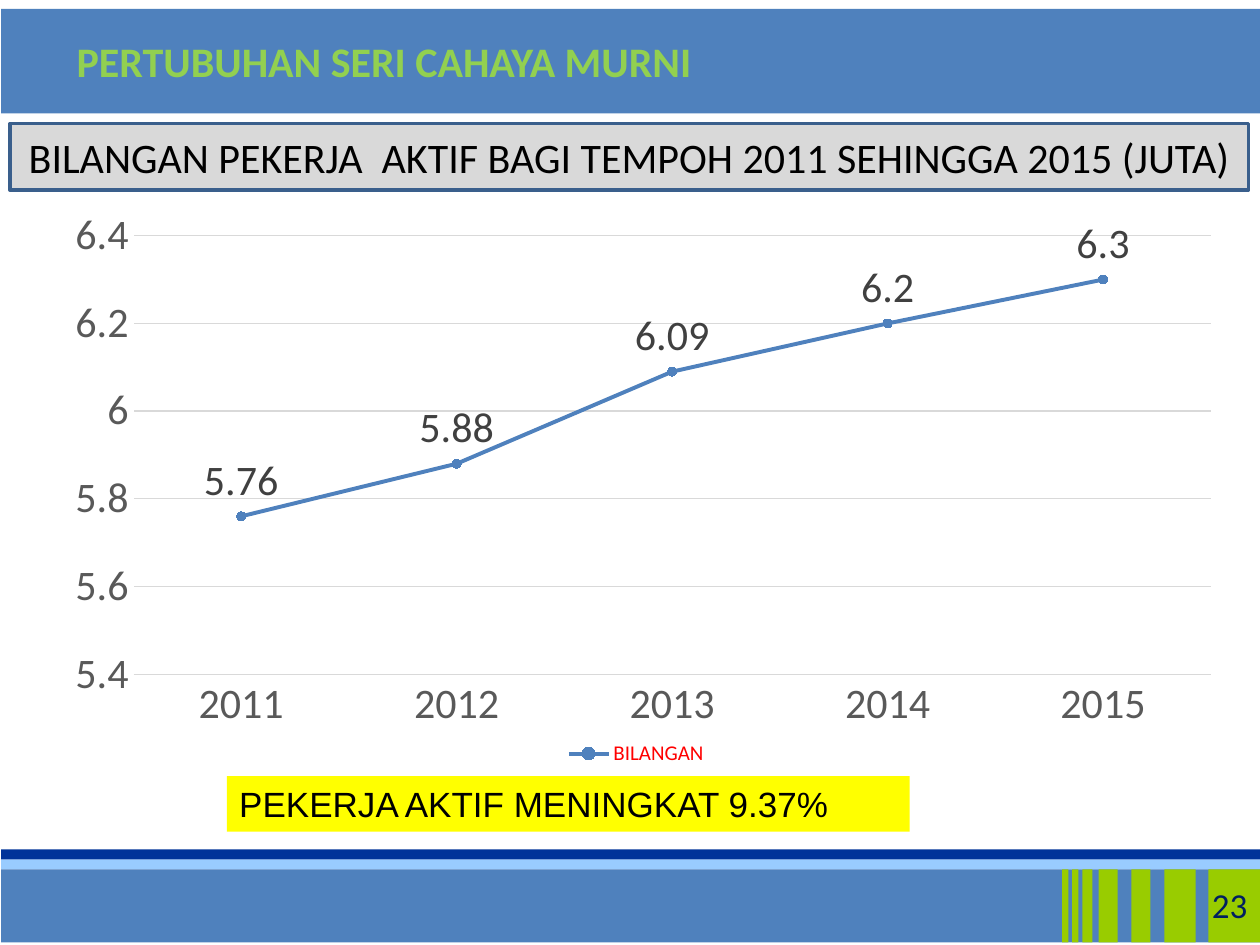
from dataclasses import dataclass

from lxml import etree
from pptx import Presentation
from pptx.chart import data as cd
from pptx.dml import color as dc
from pptx.enum import chart as ec
from pptx.enum import shapes, text
from pptx.oxml import ns
from pptx.util import Inches, Pt

BLUE, GREEN, GREY = "4F81BD", "99CC00", "D9D9D9"


@dataclass
class Box:
    left: float
    top: float
    width: float
    height: float

    def lengths(self) -> tuple:
        return tuple(Inches(v) for v in (self.left, self.top, self.width, self.height))


@dataclass
class Label:
    words: str
    size: float
    color: str
    font: str = "Calibri"
    bold: bool = False
    align: text.PP_ALIGN = text.PP_ALIGN.LEFT
    anchor: text.MSO_ANCHOR = text.MSO_ANCHOR.TOP
    level: int = 0


def rgb(value: str) -> dc.RGBColor:
    return dc.RGBColor.from_string(value)


def paint(fill, color: str) -> None:
    fill.solid()
    fill.fore_color.rgb = rgb(color)


def set_all(target, values: dict) -> None:
    for name, value in values.items():
        setattr(target, name, value)


def style_font(font, size: float, color: str, name: str = "Calibri", bold: bool = False) -> None:
    set_all(font, {"size": Pt(size), "name": name, "bold": bold})
    font.color.rgb = rgb(color)


def style_line(line, color: str, width: float) -> None:
    line.color.rgb = rgb(color)
    line.width = Pt(width)


def write(sp, label: Label) -> None:
    tf = sp.text_frame
    set_all(tf, {"word_wrap": True, "auto_size": text.MSO_AUTO_SIZE.NONE,
                 "vertical_anchor": label.anchor})
    p = tf.paragraphs[0]
    set_all(p, {"alignment": label.align, "level": label.level})
    r = p.add_run()
    r.text = label.words
    style_font(r.font, label.size, label.color, label.font, label.bold)


def add_rect(s, box: Box, color: str):
    sp = s.shapes.add_shape(shapes.MSO_SHAPE.RECTANGLE, *box.lengths())
    sp.shadow.inherit = False
    paint(sp.fill, color)
    sp.line.fill.background()
    return sp


def add_text(s, box: Box, label: Label) -> None:
    write(s.shapes.add_textbox(*box.lengths()), label)


def place_plot(chart, **area: float) -> None:
    plot_area = chart._chartSpace.chart.plotArea
    for old in plot_area.findall(ns.qn("c:layout")):
        plot_area.remove(old)
    layout = etree.Element(ns.qn("c:layout"))
    manual = etree.SubElement(layout, ns.qn("c:manualLayout"))
    values = {"layoutTarget": "inner", "xMode": "edge", "yMode": "edge", **area}
    for tag, value in values.items():
        etree.SubElement(manual, ns.qn(f"c:{tag}")).set("val", str(value))
    plot_area.insert(0, layout)


def add_workers_chart(s, box: Box) -> None:
    data = cd.CategoryChartData()
    data.categories = [str(year) for year in range(2011, 2016)]
    data.add_series("BILANGAN", (5.76, 5.88, 6.09, 6.2, 6.3))
    chart = s.shapes.add_chart(ec.XL_CHART_TYPE.LINE_MARKERS, *box.lengths(), data).chart
    set_all(chart, {"has_title": False, "has_legend": True})
    style_font(chart.font, 10, "000000")
    set_all(chart.legend, {"position": ec.XL_LEGEND_POSITION.BOTTOM, "include_in_layout": False})
    style_font(chart.legend.font, 12, "FF0000")
    place_plot(chart, x=0.08, y=0.06, w=0.9, h=0.77)

    for axis in (chart.category_axis, chart.value_axis):
        set_all(axis, {"major_tick_mark": ec.XL_TICK_MARK.NONE,
                       "minor_tick_mark": ec.XL_TICK_MARK.NONE})
        style_font(axis.tick_labels.font, 24, "595959")
    style_line(chart.category_axis.format.line, GREY, 0.75)
    set_all(chart.value_axis, {"minimum_scale": 5.4, "maximum_scale": 6.4, "major_unit": 0.2})
    chart.value_axis.format.line.fill.background()
    style_line(chart.value_axis.major_gridlines.format.line, GREY, 0.75)

    plot = chart.plots[0]
    plot.vary_by_categories = False
    series = plot.series[0]
    series.smooth = False
    style_line(series.format.line, BLUE, 2.25)
    set_all(series.marker, {"style": ec.XL_MARKER_STYLE.CIRCLE, "size": 5})
    paint(series.marker.format.fill, BLUE)
    style_line(series.marker.format.line, BLUE, 0.75)
    labels = series.data_labels
    set_all(labels, {"show_value": True, "position": ec.XL_LABEL_POSITION.ABOVE})
    style_font(labels.font, 24, "404040")


def add_title(s, box: Box, label: Label) -> None:
    title = s.shapes.title
    set_all(title, dict(zip(("left", "top", "width", "height"), box.lengths())))
    paint(title.fill, GREY)
    style_line(title.line, "3A5F8C", 2)
    write(title, label)


def main() -> None:
    prs = Presentation()
    set_all(prs, {"slide_width": Inches(10), "slide_height": Inches(7.5)})
    s = prs.slides.add_slide(prs.slide_layouts[5])

    add_title(s, Box(0.08, 0.98, 9.83, 0.53),
              Label("BILANGAN PEKERJA  AKTIF BAGI TEMPOH 2011 SEHINGGA 2015 (JUTA)", 24, "000000",
                    align=text.PP_ALIGN.CENTER, anchor=text.MSO_ANCHOR.MIDDLE))
    add_workers_chart(s, Box(0.3, 1.6, 9.5, 4.52))

    bands = ((6.82, 0.08, "99CCFF"), (6.74, 0.08, "003399"), (6.9, 0.58, BLUE), (0.07, 0.83, BLUE))
    for top, height, color in bands:
        add_rect(s, Box(0.01, top, 10, height), color)

    stripes = ((9.59, 0.42), (9.24, 0.25), (8.98, 0.15), (8.72, 0.15),
               (8.59, 0.08), (8.51, 0.05), (8.43, 0.05))
    for left, width in stripes:
        add_rect(s, Box(left, 6.9, width, 0.58), GREEN)

    add_text(s, Box(0.01, 0.23, 9, 0.51),
             Label("PERTUBUHAN SERI CAHAYA MURNI", 24, "92D050", bold=True, level=1))
    add_text(s, Box(7.67, 6.98, 2.33, 0.4),
             Label("23", 20, "002060", align=text.PP_ALIGN.RIGHT, anchor=text.MSO_ANCHOR.MIDDLE))
    write(add_rect(s, Box(1.8, 6.16, 5.42, 0.44), "FFFF00"),
          Label("PEKERJA AKTIF MENINGKAT 9.37%", 20, "000000", font="Arial"))

    prs.save("out.pptx")


if __name__ == "__main__":
    main()
